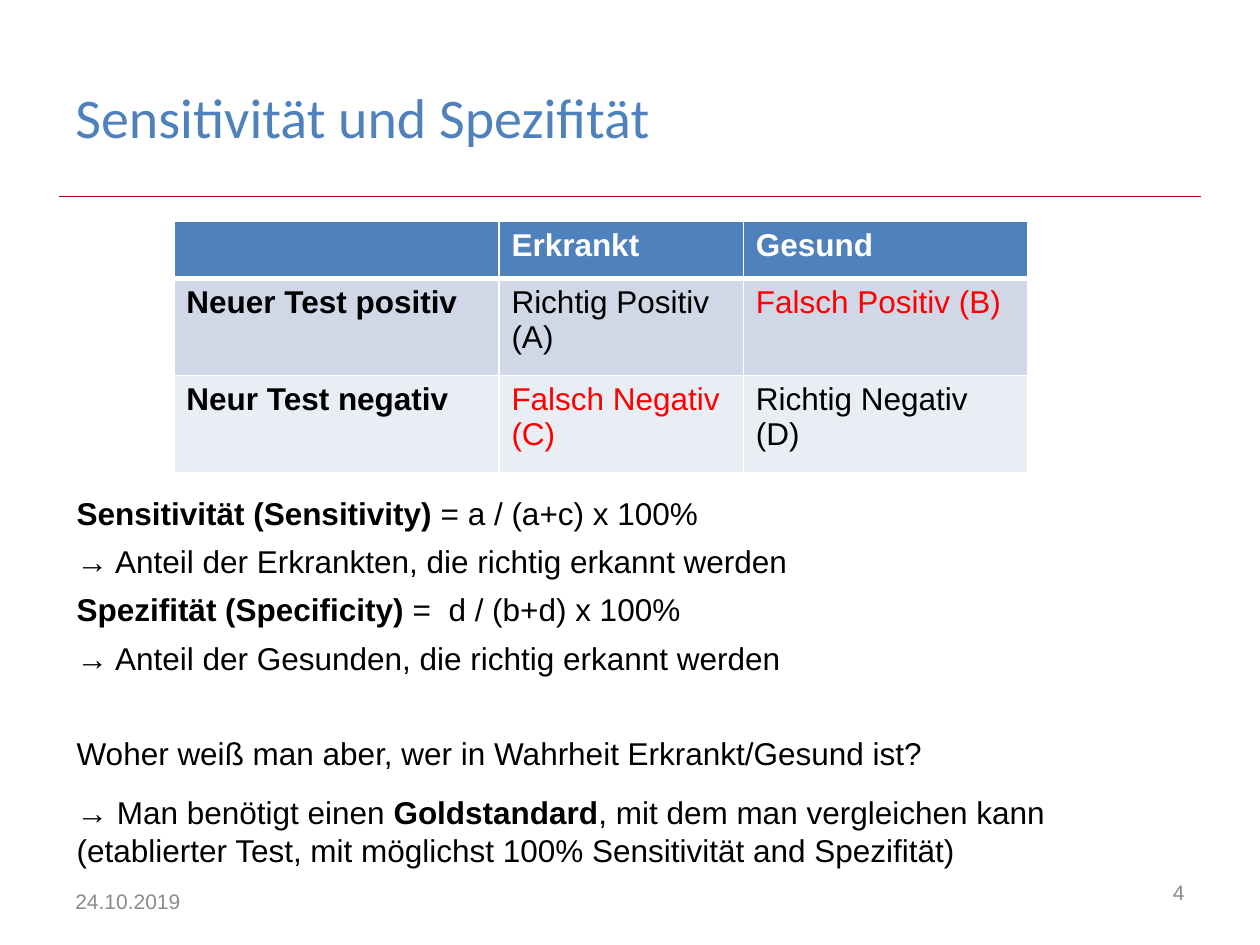
from typing import NamedTuple

from lxml import etree
from pptx import Presentation
from pptx.dml.color import RGBColor
from pptx.enum import shapes, text
from pptx.oxml import ns
from pptx.util import Inches, Pt

BLUE = RGBColor(0x4F, 0x81, 0xBD)
BAND_DARK = RGBColor(0xD0, 0xD8, 0xE8)
BAND_LIGHT = RGBColor(0xE9, 0xED, 0xF4)
WHITE = RGBColor(0xFF, 0xFF, 0xFF)
BLACK = RGBColor(0, 0, 0)
RED = RGBColor(0xFF, 0, 0)
GRAY = RGBColor(0x8C, 0x8C, 0x8C)
RULE_RED = RGBColor(0xAC, 0, 0)


class Area(NamedTuple):
    left: float
    top: float
    width: float
    height: float


class Span(NamedTuple):
    words: str
    bold: bool = False


class Line(NamedTuple):
    spans: list[Span]
    before: float = 6
    after: float = 0


class Entry(NamedTuple):
    words: str
    color: RGBColor = BLACK
    bold: bool = False


class Row(NamedTuple):
    height: float
    fill: RGBColor
    bottom_border: float
    entries: list[Entry]


TABLE_AREA = Area(1.38, 1.76, 6.78, 1.99)
COLUMN_WIDTHS = [2.58, 1.94, 2.26]
ROWS = [
    Row(0.45, BLUE, 3, [Entry(""), Entry("Erkrankt", WHITE, True), Entry("Gesund", WHITE, True)]),
    Row(0.77, BAND_DARK, 1, [Entry("Neuer Test positiv", bold=True),
                             Entry("Richtig Positiv (A)"), Entry("Falsch Positiv (B)", RED)]),
    Row(0.77, BAND_LIGHT, 1, [Entry("Neur Test negativ", bold=True),
                              Entry("Falsch Negativ (C)", RED), Entry("Richtig Negativ (D)")]),
]

EXPLANATION = [
    Line([Span("Sensitivität (Sensitivity)", True), Span(" = a / (a+c) x 100%")], before=0),
    Line([Span("→ Anteil der Erkrankten, die richtig erkannt werden")]),
    Line([Span("Spezifität (Specificity)", True), Span(" =  d / (b+d) x 100%")]),
    Line([Span("→ Anteil der Gesunden, die richtig erkannt werden")]),
    Line([Span("Woher weiß man aber, wer in Wahrheit Erkrankt/Gesund ist?")], before=33, after=6),
    Line([Span("→ Man benötigt einen "), Span("Goldstandard", True),
          Span(", mit dem man vergleichen kann (etablierter Test, "
               "mit möglichst 100% Sensitivität and Spezifität)")], after=6),
]


def style(font, size: float, color: RGBColor, name: str = "Arial") -> None:
    font.name, font.size = name, Pt(size)
    font.color.rgb = color


def add_box(page, area: Area, anchor=text.MSO_ANCHOR.MIDDLE):
    box = page.shapes.add_textbox(*map(Inches, area))
    box.text_frame.word_wrap = True
    box.text_frame.vertical_anchor = anchor
    return box


def add_label(page, area: Area, words: str, size: float, color: RGBColor,
              name: str = "Arial", align=text.PP_ALIGN.LEFT) -> None:
    para = add_box(page, area).text_frame.paragraphs[0]
    para.text, para.alignment = words, align
    style(para.font, size, color, name)


def add_rule(page, left: float, right: float, y: float) -> None:
    rule = page.shapes.add_connector(shapes.MSO_CONNECTOR.STRAIGHT, Inches(left), Inches(y),
                                     Inches(right), Inches(y))
    rule.line.color.rgb = RULE_RED
    rule.line.width = Pt(0.25)
    etree.SubElement(rule._element.spPr, ns.qn("a:effectLst"))


def add_border(cell, side: str, width: float) -> None:
    border = etree.SubElement(cell._tc.get_or_add_tcPr(), ns.qn(f"a:ln{side}"), w=str(Pt(width)))
    fill = etree.SubElement(border, ns.qn("a:solidFill"))
    etree.SubElement(fill, ns.qn("a:srgbClr"), val=str(WHITE))


def fill_cell(cell, entry: Entry, row: Row, top_border: float) -> None:
    # Borders come before the fill in the cell properties
    for side, width in zip("LRTB", (1, 1, top_border, row.bottom_border)):
        add_border(cell, side, width)
    cell.fill.solid()
    cell.fill.fore_color.rgb = row.fill
    para = cell.text_frame.paragraphs[0]
    if entry.words:
        para.text = entry.words
    style(para.font, 18, entry.color)
    para.font.bold = entry.bold


def add_test_table(page) -> None:
    table = page.shapes.add_table(len(ROWS), len(COLUMN_WIDTHS), *map(Inches, TABLE_AREA)).table
    for column, width in zip(table.columns, COLUMN_WIDTHS):
        column.width = Inches(width)
    top_border = 1
    for index, row in enumerate(ROWS):
        table.rows[index].height = Inches(row.height)
        for cell, entry in zip(table.rows[index].cells, row.entries):
            fill_cell(cell, entry, row, top_border)
        top_border = row.bottom_border


def add_explanation(page, area: Area, lines: list[Line]) -> None:
    frame = add_box(page, area, text.MSO_ANCHOR.TOP).text_frame
    frame.auto_size = text.MSO_AUTO_SIZE.SHAPE_TO_FIT_TEXT
    for index, line in enumerate(lines):
        para = frame.add_paragraph() if index else frame.paragraphs[0]
        para.space_before, para.space_after = Pt(line.before), Pt(line.after)
        style(para.font, 18, BLACK)
        for span in line.spans:
            run = para.add_run()
            run.text = span.words
            run.font.bold = span.bold


def main() -> None:
    deck = Presentation()
    deck.slide_width, deck.slide_height = Inches(10), Inches(7.5)
    page = deck.slides.add_slide(deck.slide_layouts[6])

    # Heading
    add_rule(page, 0.47, 9.53, 1.56)
    add_label(page, Area(0.5, 0.3, 6.77, 1.25), "Sensitivität und Spezifität", 32, BLUE, "Calibri")

    # Footer
    add_label(page, Area(0.5, 6.95, 2.33, 0.4), "24.10.2019", 12, GRAY)
    add_label(page, Area(7.17, 6.83, 2.33, 0.5), "4", 12, GRAY, align=text.PP_ALIGN.RIGHT)

    # Content
    add_test_table(page)
    add_explanation(page, Area(0.51, 3.87, 8.82, 3.11), EXPLANATION)

    deck.save("out.pptx")


if __name__ == "__main__":
    main()
